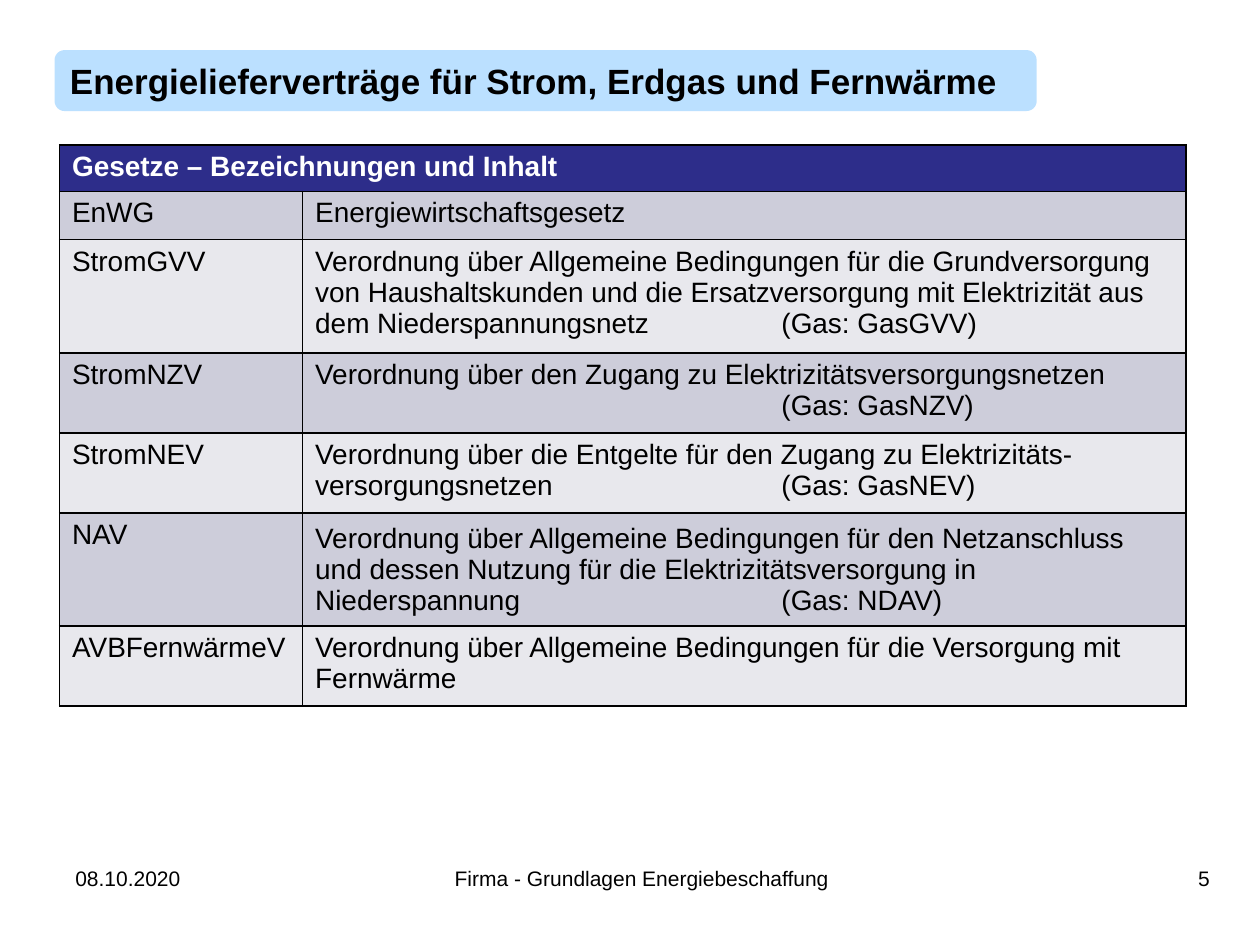
from lxml.etree import SubElement
from pptx import Presentation
from pptx.dml.color import RGBColor
from pptx.enum.shapes import MSO_SHAPE
from pptx.enum.text import MSO_ANCHOR, PP_ALIGN
from pptx.oxml.ns import qn
from pptx.util import Cm, Pt

BLACK = RGBColor(0x00, 0x00, 0x00)
WHITE = RGBColor(0xFF, 0xFF, 0xFF)
SKY = RGBColor(0x05, 0x8E, 0xFF)
NAVY = RGBColor(0x2D, 0x2D, 0x8A)
BANDS = (RGBColor(0xCD, 0xCD, 0xDA), RGBColor(0xE8, 0xE8, 0xED))

TITLE_FONT = {"name": "Arial", "size": Pt(20), "bold": True}
HEADER_FONT = {"name": "Arial", "size": Pt(16), "bold": True}
LAW_FONT = {"name": "Arial", "size": Pt(16), "bold": False}
FOOTER_FONT = {"name": "Arial", "size": Pt(12)}

COLUMN_WIDTHS = (4.9, 17.81)
ROW_HEIGHTS = (0.94, 0.97, 2.29, 1.61, 1.61, 2.28, 1.61)
GAS_TAB = 9.4
HEADING = "Gesetze – Bezeichnungen und Inhalt"
LAWS = (
    ("EnWG", "Energiewirtschaftsgesetz"),
    ("StromGVV", "Verordnung über Allgemeine Bedingungen für die Grundversorgung "
     "von Haushaltskunden und die Ersatzversorgung mit Elektrizität aus "
     "dem Niederspannungsnetz\t(Gas: GasGVV)"),
    ("StromNZV", "Verordnung über den Zugang zu Elektrizitätsversorgungsnetzen\n"
     "\t(Gas: GasNZV)"),
    ("StromNEV", "Verordnung über die Entgelte für den Zugang zu Elektrizitäts-"
     "versorgungsnetzen\t(Gas: GasNEV)"),
    ("NAV", "Verordnung über Allgemeine Bedingungen für den Netzanschluss "
     "und dessen Nutzung für die Elektrizitätsversorgung in "
     "Niederspannung\t(Gas: NDAV)"),
    ("AVBFernwärmeV", "Verordnung über Allgemeine Bedingungen für die Versorgung mit\n"
     "Fernwärme"),
)


def write(frame, text, font_format, color, align=PP_ALIGN.LEFT):
    frame.word_wrap = True
    for number, line in enumerate(text.split("\n")):
        paragraph = frame.add_paragraph() if number else frame.paragraphs[0]
        paragraph.alignment = align
        if "\t" in line:
            stops = SubElement(paragraph._p.get_or_add_pPr(), qn("a:tabLst"))
            SubElement(stops, qn("a:tab"), pos=str(Cm(GAS_TAB)), algn="l")
        run = paragraph.add_run()
        run.text = line
        for attribute, value in font_format.items():
            setattr(run.font, attribute, value)
        run.font.color.rgb = color


def add_title(slide, left, top, width, height):
    banner = slide.shapes.add_shape(
        MSO_SHAPE.ROUNDED_RECTANGLE, Cm(left), Cm(top), Cm(width), Cm(height))
    banner.shadow.inherit = False
    banner.fill.solid()
    banner.fill.fore_color.rgb = SKY
    tint = banner._element.spPr.find(qn("a:solidFill"))[0]
    SubElement(tint, qn("a:alpha"), val="27000")
    banner.line.fill.background()
    banner.text_frame.vertical_anchor = MSO_ANCHOR.MIDDLE
    write(banner.text_frame, "Energielieferverträge für Strom, Erdgas und Fernwärme",
          TITLE_FONT, BLACK)


def style_cell(cell, color):
    properties = cell._tc.get_or_add_tcPr()
    for side in ("a:lnL", "a:lnR", "a:lnT", "a:lnB"):
        border = SubElement(properties, qn(side), w=str(Pt(1)))
        SubElement(SubElement(border, qn("a:solidFill")), qn("a:srgbClr"), val=str(BLACK))
    cell.fill.solid()
    cell.fill.fore_color.rgb = color


def add_laws(slide, left, top):
    table = slide.shapes.add_table(
        len(ROW_HEIGHTS), len(COLUMN_WIDTHS), Cm(left), Cm(top),
        Cm(sum(COLUMN_WIDTHS)), Cm(sum(ROW_HEIGHTS))).table
    for column, width in zip(table.columns, COLUMN_WIDTHS):
        column.width = Cm(width)
    for row, height in zip(table.rows, ROW_HEIGHTS):
        row.height = Cm(height)
    for cell in table.rows[0].cells:
        style_cell(cell, NAVY)
    heading = table.cell(0, 0)
    heading.merge(table.cell(0, 1))
    write(heading.text_frame, HEADING, HEADER_FONT, WHITE)
    for number, law in enumerate(LAWS):
        for column, text in enumerate(law):
            cell = table.cell(number + 1, column)
            style_cell(cell, BANDS[number % 2])
            write(cell.text_frame, text, LAW_FONT, BLACK)
            if law[0] == "NAV" and column == 1:
                cell.vertical_anchor = MSO_ANCHOR.MIDDLE


def add_footer(slide, left, top, height):
    parts = (
        (0, 2.62, "08.10.2020", PP_ALIGN.LEFT),
        (3.17, 17, "Firma - Grundlagen Energiebeschaffung", PP_ALIGN.CENTER),
        (21.23, 2.14, "5", PP_ALIGN.RIGHT),
    )
    for offset, width, text, align in parts:
        box = slide.shapes.add_textbox(Cm(left + offset), Cm(top), Cm(width), Cm(height))
        write(box.text_frame, text, FOOTER_FONT, BLACK, align)


def main():
    presentation = Presentation()
    presentation.slide_width = Cm(25.4)
    presentation.slide_height = Cm(19.05)
    slide = presentation.slides.add_slide(presentation.slide_layouts[6])
    add_title(slide, 1.1, 1.01, 19.8, 1.23)
    add_laws(slide, 1.2, 2.92)
    add_footer(slide, 1.27, 17.33, 1.32)
    presentation.save("out.pptx")


if __name__ == "__main__":
    main()
